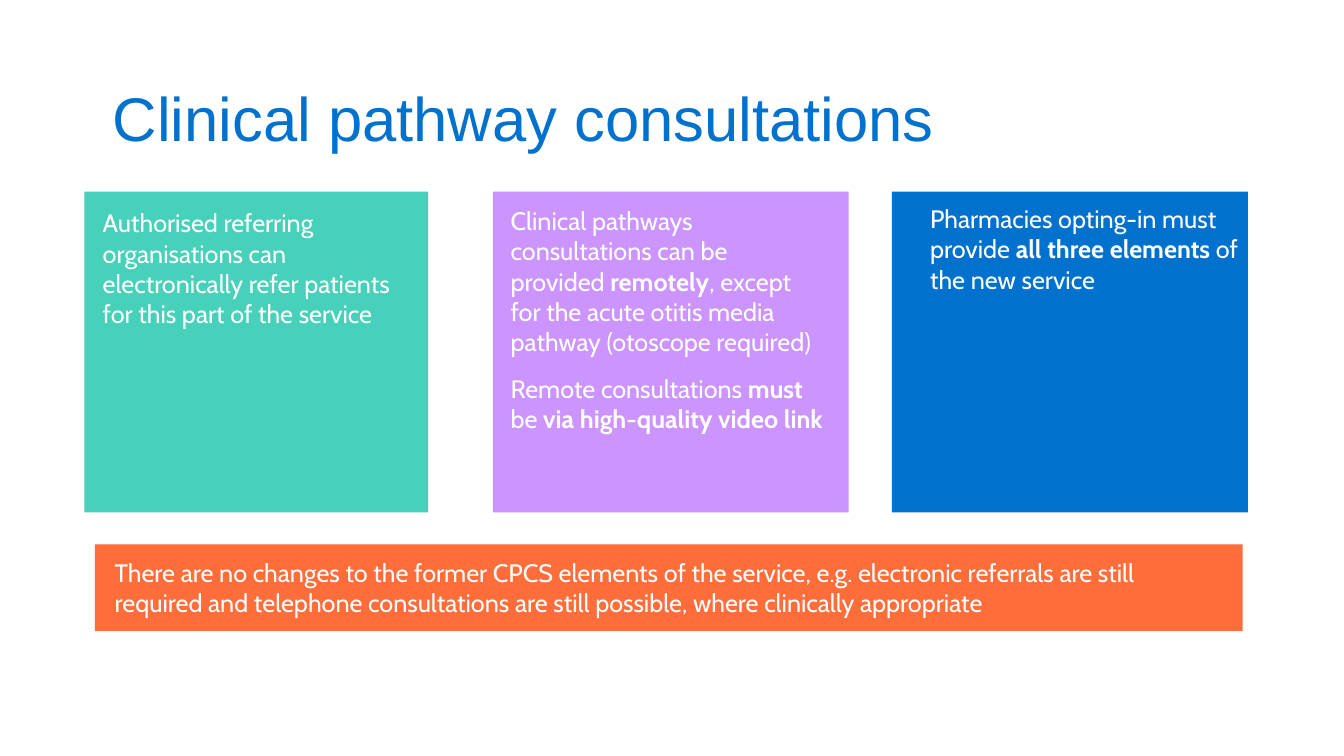
import pptx
import pptx.util
import pptx.dml.color
import pptx.enum.shapes
import pptx.enum.text

Cm, Pt = pptx.util.Cm, pptx.util.Pt
HUES = {"teal": "47D1BA", "lilac": "CC94FF", "blue": "0072CE",
        "orange": "FF6D3A", "white": "FFFFFF"}

TITLE = "Clinical pathway consultations"
TITLE_AT = (2.59, 1.02, 28.93, 3.68)

# Within each paragraph, runs alternate between plain and bold.
PANELS = [
    ("teal", (2.13, 4.83, 8.66, 8.08), (2.34, 5.11, 8.33, 4.11), [
        ["Authorised referring organisations can electronically refer "
         "patients for this part of the service"]]),
    ("lilac", (12.42, 4.83, 8.97, 8.08), (12.62, 5.05, 8.43, 7.62), [
        ["Clinical pathways consultations can be provided ", "remotely",
         ", except for the acute otitis media pathway (otoscope required)"],
        ["Remote consultations ", "must", " be ",
         "via high-quality video link"]]),
    ("blue", (22.48, 4.83, 8.97, 8.08), (23.19, 5.0, 8.36, 4.52), [
        ["Pharmacies opting-in must provide ", "all three elements",
         " of the new service"]]),
    ("orange", (2.39, 13.72, 28.93, 2.18), (2.64, 13.92, 28.45, 1.8), [
        ["There are no changes to the former CPCS elements of the service, "
         "e.g. electronic referrals are still required and telephone "
         "consultations are still possible, where clinically appropriate"]]),
]
HEAD = {"name": "Arial", "size": Pt(44), "bold": False}
BODY = {"name": "Cabin", "size": Pt(18)}
GAP = Pt(12)


def rgb(hue):
    return pptx.dml.color.RGBColor.from_string(HUES[hue])


def style(font, look, hue):
    for key, value in look.items():
        setattr(font, key, value)
    font.color.rgb = rgb(hue)


def add_card(slide, hue, at):
    kind = pptx.enum.shapes.MSO_SHAPE.RECTANGLE
    card = slide.shapes.add_shape(kind, *map(Cm, at))
    card.shadow.inherit = False
    card.fill.solid()
    card.fill.fore_color.rgb = rgb(hue)
    card.line.fill.background()


def add_text(slide, at, paras, look, hue):
    frame = slide.shapes.add_textbox(*map(Cm, at)).text_frame
    frame.word_wrap = True
    for row, runs in enumerate(paras):
        para = frame.add_paragraph() if row else frame.paragraphs[0]
        if row:
            para.space_before = GAP
        for spot, words in enumerate(runs):
            run = para.add_run()
            run.text = words
            style(run.font, {"bold": spot % 2 == 1, **look}, hue)
    return frame


def main():
    """Build the clinical pathway consultations slide."""
    deck = pptx.Presentation()
    deck.slide_width, deck.slide_height = Cm(33.87), Cm(19.05)
    slide = deck.slides.add_slide(deck.slide_layouts[6])
    head = add_text(slide, TITLE_AT, [[TITLE]], HEAD, "blue")
    head.vertical_anchor = pptx.enum.text.MSO_ANCHOR.MIDDLE
    head.paragraphs[0].line_spacing = 1.1
    for hue, card, text, paras in PANELS:
        add_card(slide, hue, card)
        add_text(slide, text, paras, BODY, "white")
    deck.save("out.pptx")


if __name__ == "__main__":
    main()
